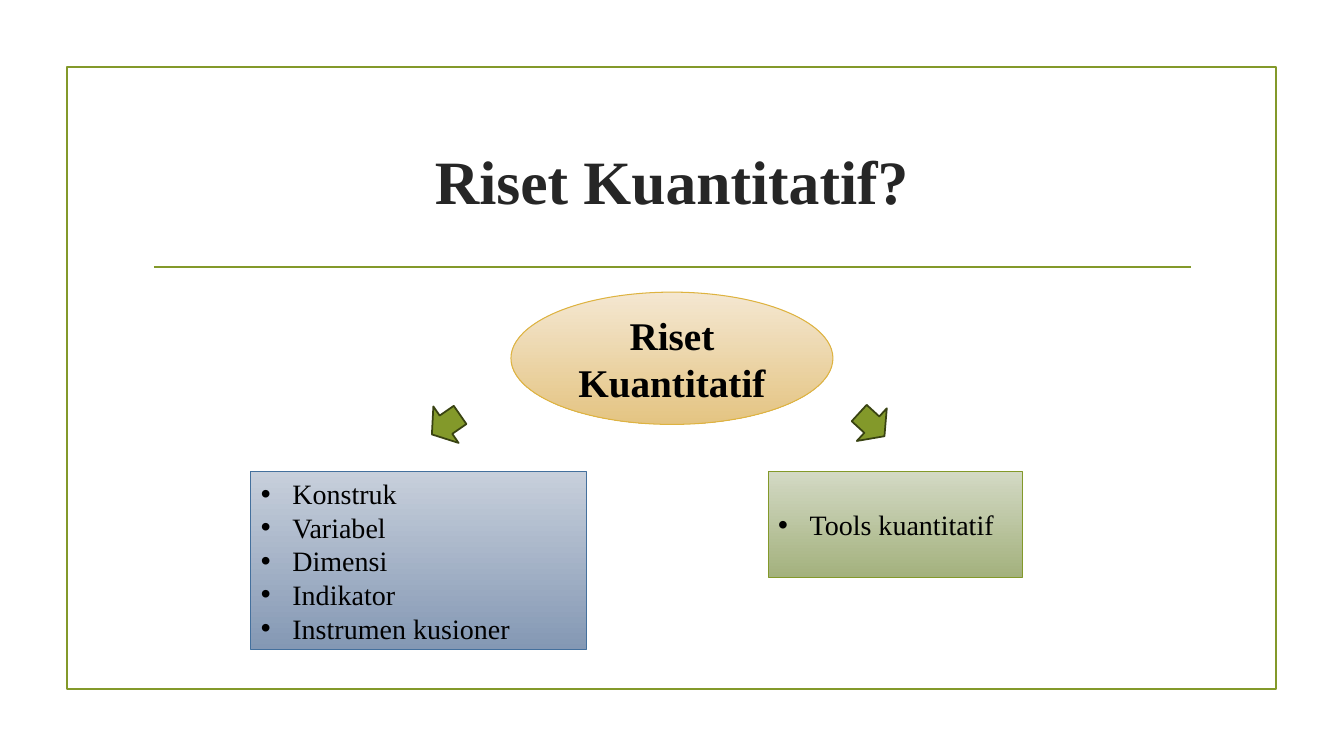
"""Build the slide on quantitative research with its two branches."""
from lxml import etree
from pptx import Presentation
from pptx.dml.color import RGBColor
from pptx.enum import shapes, text
from pptx.oxml import ns
from pptx.util import Pt

COLORS = {
    "green": "83992A", "dark green": "394312", "title": "262626", "black": "000000",
    "gold": "DEB340", "gold top": "F4E7D1", "gold bottom": "E4C482",
    "blue": "44709D", "blue top": "C7CFDB", "blue bottom": "8498B4",
    "sage top": "D3D9C4", "sage bottom": "A3B17D",
}
FONT = "Times New Roman"
KIND = shapes.MSO_SHAPE


def write(box, lines, size, color="black", bold=False, bullets=False):
    frame = box.text_frame
    frame.word_wrap = True
    frame.vertical_anchor = text.MSO_ANCHOR.MIDDLE
    for index, line in enumerate(lines):
        para = frame.add_paragraph() if index else frame.paragraphs[0]
        para.alignment = text.PP_ALIGN.LEFT if bullets else text.PP_ALIGN.CENTER
        if bullets:
            props = para._p.get_or_add_pPr()
            props.set("marL", str(Pt(22.5)))
            props.set("indent", str(-Pt(22.5)))
            etree.SubElement(props, ns.qn("a:buFont"), typeface="Arial")
            etree.SubElement(props, ns.qn("a:buChar"), char="•")
        span = para.add_run()
        span.text = line
        span.font.name = FONT
        span.font.size = Pt(size)
        span.font.bold = bold
        span.font.color.rgb = RGBColor.from_string(COLORS[color])


def add_shape(kind, place, line, width, fill=()):
    box = page.shapes.add_shape(kind, *map(Pt, place))
    box.shadow.inherit = False
    box.line.color.rgb = RGBColor.from_string(COLORS[line])
    box.line.width = Pt(width)
    if len(fill) == 2:
        box.fill.gradient()
        box.fill.gradient_angle = 270
        for stop, position, color in zip(box.fill.gradient_stops, (0, 1), fill):
            stop.position = position
            stop.color.rgb = RGBColor.from_string(COLORS[color])
    elif fill:
        box.fill.solid()
        box.fill.fore_color.rgb = RGBColor.from_string(COLORS[fill[0]])
    else:
        box.fill.background()
    return box


deck = Presentation()
deck.slide_width, deck.slide_height = Pt(960), Pt(540)
page = deck.slides.add_slide(deck.slide_layouts[5])

add_shape(KIND.RECTANGLE, (47.7, 48, 864, 444), "green", 1.25)

rule = page.shapes.add_connector(
    shapes.MSO_CONNECTOR.STRAIGHT, Pt(110), Pt(190.8), Pt(850.5), Pt(190.8))
rule.line.color.rgb = RGBColor.from_string(COLORS["green"])
rule.line.width = Pt(1.25)
etree.SubElement(rule._element.spPr, ns.qn("a:effectLst"))

title = page.shapes.title
title.left, title.top, title.width, title.height = map(Pt, (102, 77, 756, 103))
write(title, ["Riset Kuantitatif?"], 44, color="title", bold=True)

topic = add_shape(KIND.OVAL, (365, 208.7, 230, 94.5), "gold", 0.75,
                  fill=("gold top", "gold bottom"))
write(topic, ["Riset Kuantitatif"], 28, bold=True)

for left, angle in ((610.5, 42.5), (306.3, 145.3)):
    arrow = add_shape(KIND.RIGHT_ARROW, (left, 287.5, 24.5, 31.7), "dark green", 1.25,
                      fill=("green",))
    arrow.rotation = angle

branches = [
    ((179.3, 337, 239.7, 127), "blue", ("blue top", "blue bottom"),
     ["Konstruk", "Variabel", "Dimensi", "Indikator", "Instrumen kusioner"]),
    ((548.7, 337, 181.4, 75.5), "green", ("sage top", "sage bottom"),
     ["Tools kuantitatif"]),
]
for place, line, fill, items in branches:
    branch = add_shape(KIND.RECTANGLE, place, line, 0.75, fill=fill)
    write(branch, items, 20, bullets=True)

deck.save("out.pptx")
